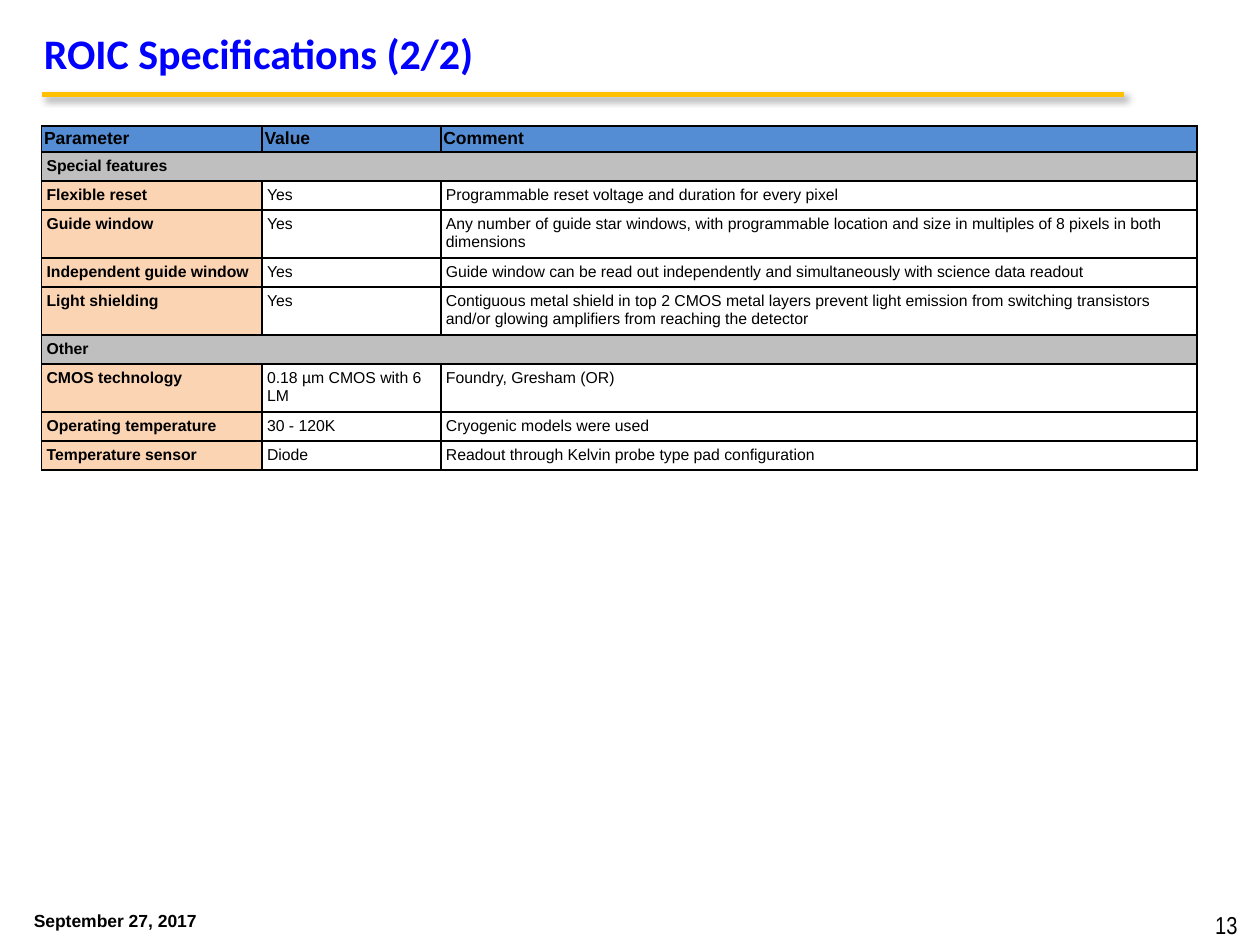
from dataclasses import dataclass
from lxml.etree import SubElement
from pptx import Presentation
from pptx.dml.color import RGBColor
from pptx.enum.shapes import MSO_CONNECTOR
from pptx.enum.text import MSO_ANCHOR, PP_ALIGN
from pptx.oxml.ns import qn
from pptx.util import Inches, Pt


@dataclass(frozen=True)
class Theme:
    black: str = "000000"
    blue: str = "0000FF"
    gold: str = "FFC000"
    head: str = "548DD4"
    group: str = "BFBFBF"
    label: str = "FBD4B4"
    sans: str = "Arial"
    narrow: str = "Arial Narrow"
    display: str = "Calibri"
    title: int = 24
    page: int = 14
    note: int = 10
    body: int = 9


class Deck:
    def __init__(self, theme):
        self.theme = theme
        self.prs = Presentation()
        self.prs.slide_width = Inches(10)
        self.prs.slide_height = Inches(7.5)
        self.slide = self.prs.slides.add_slide(self.prs.slide_layouts[6])

    def style(self, para, size, name=None, color=None, bold=False):
        font = para.font
        font.size = Pt(size)
        font.name = name or self.theme.sans
        font.bold = bold
        font.color.rgb = RGBColor.from_string(color or self.theme.black)

    def text(self, words, box, size, align=PP_ALIGN.LEFT,
             anchor=MSO_ANCHOR.TOP, wrap=True, **look):
        frame = self.slide.shapes.add_textbox(*map(Inches, box)).text_frame
        frame.word_wrap = wrap
        frame.vertical_anchor = anchor
        para = frame.paragraphs[0]
        para.text = words
        para.alignment = align
        self.style(para, size, **look)

    def rule(self, left, right, top):
        line = self.slide.shapes.add_connector(
            MSO_CONNECTOR.STRAIGHT, Inches(left), Inches(top), Inches(right), Inches(top))
        line.line.width = Pt(3)
        line.line.color.rgb = RGBColor.from_string(self.theme.gold)
        effects = SubElement(line._element.spPr, qn("a:effectLst"))
        shade = SubElement(effects, qn("a:outerShdw"), blurRad=str(Pt(4)),
                           dist=str(Pt(3)), dir=str(45 * 60000),
                           algn="tl", rotWithShape="0")
        color = SubElement(shade, qn("a:srgbClr"), val=self.theme.black)
        SubElement(color, qn("a:alpha"), val="40000")

    def border(self, cell):
        props = cell._tc.get_or_add_tcPr()
        for side in ("lnL", "lnR", "lnT", "lnB"):
            line = SubElement(props, qn(f"a:{side}"), w=str(Pt(1)))
            fill = SubElement(line, qn("a:solidFill"))
            SubElement(fill, qn("a:srgbClr"), val=self.theme.black)

    def cell(self, cell, words, size, inset, fill, bold):
        cell.margin_left = cell.margin_right = Inches(inset)
        cell.margin_top = cell.margin_bottom = Inches(inset)
        self.border(cell)
        if fill:
            cell.fill.solid()
            cell.fill.fore_color.rgb = RGBColor.from_string(fill)
        else:
            cell.fill.background()
        para = cell.text_frame.paragraphs[0]
        para.text = words
        self.style(para, size, bold=bold)

    def table(self, rows, box, widths, heights):
        theme = self.theme
        shape = self.slide.shapes.add_table(len(rows), len(widths), *map(Inches, box))
        table = shape.table
        table.first_row = table.horz_banding = False
        for col, width in zip(table.columns, widths):
            col.width = Inches(width)
        for row, height in zip(table.rows, heights):
            row.height = Inches(height)
        for r, row in enumerate(rows):
            group = len(row) == 1
            size, inset = (theme.note, 0.02) if r == 0 else (theme.body, 0.04)
            for c in range(len(widths)):
                words = row[c] if c < len(row) else ""
                if r == 0:
                    fill = theme.head
                elif group:
                    fill = theme.group
                else:
                    fill = theme.label if c == 0 else None
                self.cell(table.cell(r, c), words, size, inset, fill, bool(fill))
            if group:
                table.cell(r, 0).merge(table.cell(r, len(widths) - 1))

    def save(self):
        self.prs.save("out.pptx")


ROWS = [
    ("Parameter", "Value", "Comment"),
    ("Special features",),
    ("Flexible reset", "Yes", "Programmable reset voltage and duration for every pixel"),
    ("Guide window", "Yes",
     "Any number of guide star windows, with programmable location and size "
     "in multiples of 8 pixels in both dimensions"),
    ("Independent guide window", "Yes",
     "Guide window can be read out independently and simultaneously "
     "with science data readout"),
    ("Light shielding", "Yes",
     "Contiguous metal shield in top 2 CMOS metal layers prevent light emission "
     "from switching transistors and/or glowing amplifiers from reaching the detector"),
    ("Other",),
    ("CMOS technology", "0.18 µm CMOS with 6 LM", "Foundry, Gresham (OR)"),
    ("Operating temperature", "30 - 120K", "Cryogenic models were used"),
    ("Temperature sensor", "Diode", "Readout through Kelvin probe type pad configuration"),
]
HEIGHTS = [0.15, 0.14, 0.14, 0.23, 0.23, 0.32, 0.14, 0.23, 0.14, 0.14]


def main():
    theme = Theme()
    deck = Deck(theme)
    deck.rule(0.33, 8.92, 0.75)
    deck.text("ROIC Specifications (2/2)", (0.25, 0.17, 8.5, 0.5), theme.title,
              anchor=MSO_ANCHOR.MIDDLE, name=theme.display, color=theme.blue, bold=True)
    deck.text("13", (9.42, 7.17, 0.5, 0.33), theme.page,
              align=PP_ALIGN.RIGHT, name=theme.narrow)
    deck.table(ROWS, (0.33, 1, 9.17, sum(HEIGHTS)), (1.75, 1.42, 6), HEIGHTS)
    deck.text("September 27, 2017", (0.17, 7.17, 1.5, 0.25), theme.note,
              wrap=False, bold=True)
    deck.save()


if __name__ == "__main__":
    main()
